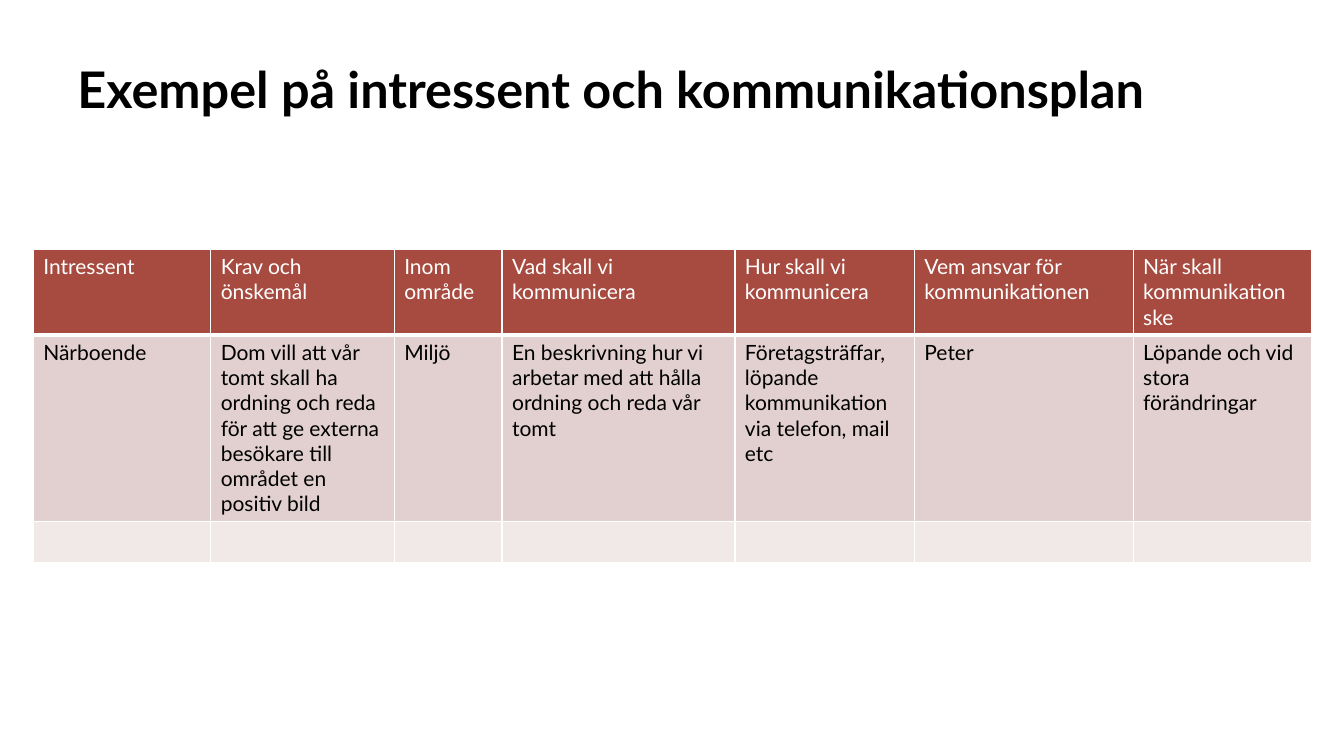
from lxml.etree import SubElement
from pptx import Presentation
from pptx.dml.color import RGBColor
from pptx.enum.text import MSO_ANCHOR
from pptx.oxml.ns import qn
from pptx.util import Inches, Pt

COLORS = {
    "black": "000000",
    "white": "FFFFFF",
    "header": "A74B40",
    "band_dark": "E1D0CF",
    "band_light": "F1E9E8",
}
COL_WIDTHS = [1.76, 1.82, 1.07, 2.31, 1.78, 2.17, 1.77]
ROW_HEIGHT = 0.41
HEADINGS = [
    "Intressent",
    "Krav och önskemål",
    "Inom område",
    "Vad skall vi kommunicera",
    "Hur skall vi kommunicera",
    "Vem ansvar för kommunikationen",
    "När skall kommunikation ske",
]
NEIGHBOURS = [
    "Närboende",
    "Dom vill att vår tomt skall ha ordning och reda för att ge externa "
    "besökare till området en positiv bild",
    "Miljö",
    "En beskrivning hur vi arbetar med att hålla ordning och reda vår tomt",
    "Företagsträffar, löpande kommunikation via telefon, mail etc",
    "Peter",
    "Löpande och vid stora förändringar",
]
# Each row: texts, fill, text colour, bottom border width
PLAN = [
    (HEADINGS, "header", "white", 3),
    (NEIGHBOURS, "band_dark", "black", 1),
    ([""] * len(COL_WIDTHS), "band_light", "black", 1),
]


class Deck:
    def __init__(self, prs, font="Lato"):
        self.s = prs.slides.add_slide(prs.slide_layouts[6])
        self.font = font

    def style(self, font, size, color, bold=False):
        font.name, font.size, font.bold = self.font, Pt(size), bold
        font.color.rgb = RGBColor.from_string(COLORS[color])

    def title(self, text, x, y, w, h):
        sp = self.s.shapes.add_textbox(Inches(x), Inches(y), Inches(w), Inches(h))
        tf = sp.text_frame
        tf.word_wrap = True
        tf.vertical_anchor = MSO_ANCHOR.TOP
        p = tf.paragraphs[0]
        p.line_spacing = 0.9
        r = p.add_run()
        r.text = text
        self.style(r.font, 36, "black", bold=True)

    def border(self, cell, side, width):
        tc_pr = cell._tc.get_or_add_tcPr()
        ln = SubElement(tc_pr, qn(f"a:ln{side}"), w=str(Pt(width)))
        fill = SubElement(ln, qn("a:solidFill"))
        SubElement(fill, qn("a:srgbClr"), val=COLORS["white"])

    def cell(self, cell, text, fill, color, bottom):
        for side, width in zip("LRTB", (1, 1, 1, bottom)):
            self.border(cell, side, width)
        cell.fill.solid()
        cell.fill.fore_color.rgb = RGBColor.from_string(COLORS[fill])
        p = cell.text_frame.paragraphs[0]
        if text:
            r = p.add_run()
            r.text = text
            self.style(r.font, 15, color)
        else:
            self.style(p.font, 15, color)

    def table(self, rows, x, y, widths, row_height):
        table = self.s.shapes.add_table(
            len(rows), len(widths), Inches(x), Inches(y),
            Inches(sum(widths)), Inches(row_height * len(rows))).table
        table.first_row = table.horz_banding = False
        for column, width in zip(table.columns, widths):
            column.width = Inches(width)
        for i, (texts, *look) in enumerate(rows):
            table.rows[i].height = Inches(row_height)
            for j, text in enumerate(texts):
                self.cell(table.cell(i, j), text, *look)


def main():
    prs = Presentation()
    prs.slide_width, prs.slide_height = Inches(13.33), Inches(7.5)
    deck = Deck(prs)
    deck.title("Exempel på intressent och kommunikationsplan", 0.67, 0.6, 11.65, 1.24)
    deck.table(PLAN, 0.33, 2.47, COL_WIDTHS, ROW_HEIGHT)
    prs.save("out.pptx")


if __name__ == "__main__":
    main()
